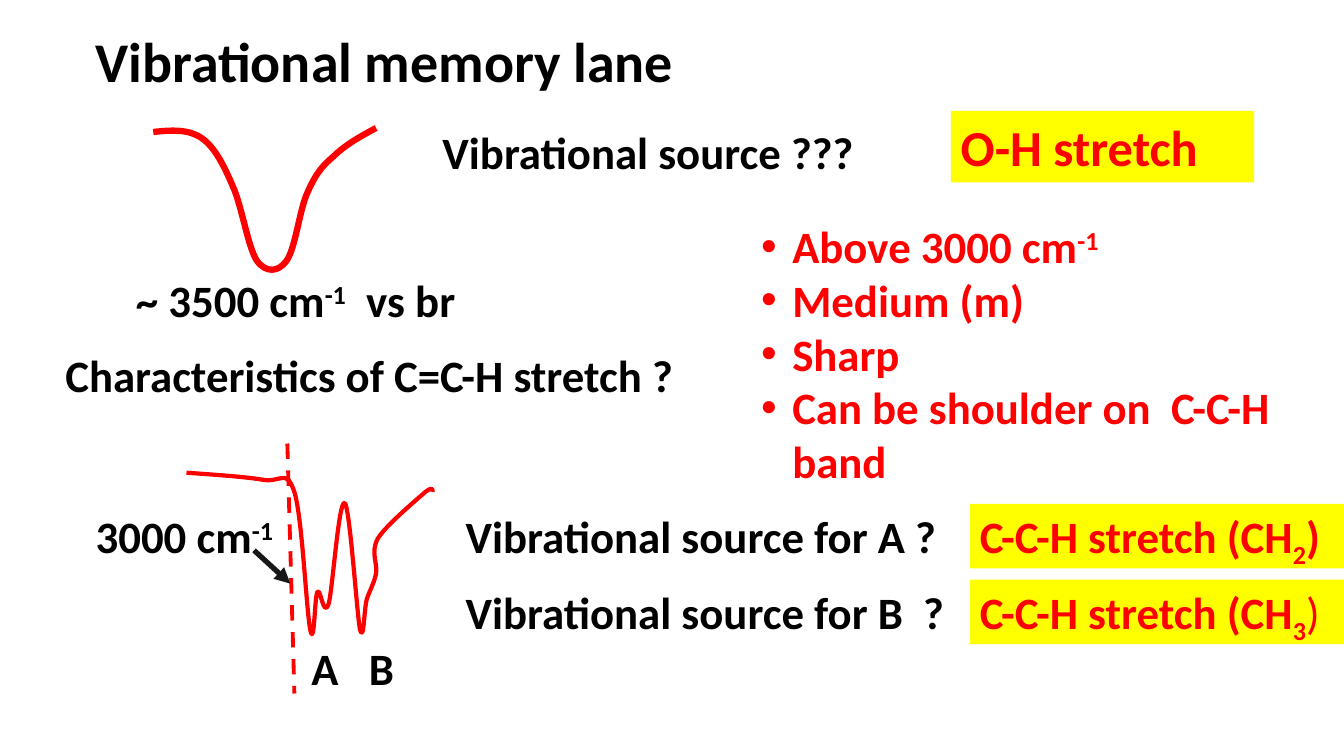
from dataclasses import dataclass
from lxml import etree
from pptx import Presentation, util as u
from pptx.dml.color import RGBColor
from pptx.enum import dml, shapes, text
from pptx.oxml.ns import qn


@dataclass(frozen=True)
class Theme:
    font: str = "Calibri"
    ink: str = "000000"
    red: str = "FF0000"
    mark: str = "FFFF00"
    arrow: str = "181717"
    title: int = 40
    large: int = 36
    body: int = 32


T = Theme()
CELL = u.Inches(0.1)  # grid of 133.3 columns by 75 rows
ROW = 6.4             # height of one line of body text
INDENT = 3.1
SUP, SUB = 30, -25

# Each curve: start point, then cubic pieces of two handles and an end
BROAD = [
    (15.2, 13.1),
    (17, 12.9), (18.7, 12.8), (20, 13.7),
    (21.3, 14.6), (22.2, 16.4), (23.1, 18.5),
    (24, 20.5), (24.6, 24.6), (25.5, 25.9),
    (26.4, 27.1), (27.6, 27), (28.4, 25.9),
    (29.3, 24.7), (29.7, 20.8), (30.5, 19.1),
    (31.3, 17.3), (31.9, 16.5), (33.1, 15.5),
    (34.2, 14.4), (35.8, 13.5), (37.3, 12.7)]
TWIN = [
    (18.5, 46.9),
    (21.4, 47.1), (24.3, 47.3), (26.1, 47.6),
    (27.9, 47.9), (28.4, 46.4), (29.2, 48.8),
    (30, 51.3), (30.4, 60.9), (30.8, 62.6),
    (31.2, 64.2), (31.2, 59.1), (31.5, 58.7),
    (31.8, 58.3), (32.1, 61.4), (32.6, 59.9),
    (33, 58.5), (33.6, 49.5), (34.2, 49.9),
    (34.7, 50.3), (35.4, 60.8), (35.7, 62.4),
    (36.1, 64), (36.1, 60.3), (36.4, 59.4),
    (36.7, 58.5), (37.1, 57.9), (37.3, 56.9),
    (37.5, 55.9), (36.7, 54.8), (37.5, 53.4),
    (38.3, 52.1), (41.3, 49.6), (42.2, 48.8),
    (43.1, 48.1), (42.9, 48.8), (42.9, 48.8)]


def grid(*cells):
    return [round(c * CELL) for c in cells]


def rgb(code):
    return RGBColor.from_string(code)


def add_runs(para, runs, size, color):
    """Runs are (words, baseline shift in percent, bold); the last two may be left out."""
    for words, *rest in runs:
        shift, bold = (rest + [0, True][len(rest):])
        run = para.add_run()
        run.text = words
        font = run.font
        font.name, font.size, font.bold = T.font, u.Pt(size), bold
        font.color.rgb = rgb(color)
        if shift:
            run._r.get_or_add_rPr().set("baseline", str(shift * 1000))


def write(shape, lines, size, color, grow=True):
    frame = shape.text_frame
    frame.word_wrap = True
    frame.vertical_anchor = text.MSO_ANCHOR.TOP
    fit = text.MSO_AUTO_SIZE
    frame.auto_size = fit.SHAPE_TO_FIT_TEXT if grow else fit.NONE
    for i, runs in enumerate(lines):
        para = frame.add_paragraph() if i else frame.paragraphs[0]
        para.alignment = text.PP_ALIGN.LEFT
        add_runs(para, runs, size, color)
    return frame


def label(slide, box, *runs, size=T.body):
    return write(slide.shapes.add_textbox(*grid(*box)), [runs], size, T.ink)


def answer(slide, box, *runs, size=T.body):
    rect = slide.shapes.add_shape(shapes.MSO_SHAPE.RECTANGLE, *grid(*box))
    rect.shadow.inherit = False
    rect.fill.solid()
    rect.fill.fore_color.rgb = rgb(T.mark)
    rect.line.fill.background()
    write(rect, [runs], size, T.red)


def bullets(slide, box, lines):
    shape = slide.shapes.add_textbox(*grid(*box))
    for para in write(shape, lines, T.body, T.red, grow=False).paragraphs:
        props = para._p.get_or_add_pPr()
        left, = grid(INDENT)
        props.set("marL", str(left))
        props.set("indent", str(-left))
        etree.SubElement(props, qn("a:buFont")).set("typeface", "Arial")
        etree.SubElement(props, qn("a:buChar")).set("char", "•")


def tab_stop(frame, pos):
    props = frame.paragraphs[0]._p.get_or_add_pPr()
    tabs = etree.SubElement(props, qn("a:tabLst"))
    stop = etree.SubElement(tabs, qn("a:tab"))
    stop.set("pos", str(grid(pos)[0]))
    stop.set("algn", "l")


def curve(slide, pts, width):
    """Draw an open outline, joining each three points into one cubic piece."""
    start, *rest = [grid(*p) for p in pts]
    pen = slide.shapes.build_freeform(*start)
    pen.add_line_segments(rest, close=False)
    shape = pen.convert_to_shape()
    steps = list(shape._element.iter(qn("a:lnTo")))
    for i in range(0, len(steps), 3):
        piece = etree.Element(qn("a:cubicBezTo"))
        steps[i].addprevious(piece)
        for step in steps[i:i + 3]:
            piece.append(step[0])
            step.getparent().remove(step)
    shape.shadow.inherit = False
    shape.fill.background()
    shape.line.color.rgb = rgb(T.red)
    shape.line.width = u.Pt(width)


def line(slide, start, end, color, width, dash=False, arrow=False):
    link = slide.shapes.add_connector(
        shapes.MSO_CONNECTOR.STRAIGHT, *grid(*start, *end))
    link.line.color.rgb = rgb(color)
    link.line.width = u.Pt(width)
    if dash:
        link.line.dash_style = dml.MSO_LINE.DASH
    if arrow:
        tail = etree.SubElement(link.line._get_or_add_ln(), qn("a:tailEnd"))
        tail.set("type", "triangle")
    etree.SubElement(link._element.spPr, qn("a:effectLst"))


def main():
    deck = Presentation()
    deck.slide_width, deck.slide_height = u.Inches(13.33), u.Inches(7.5)
    slide = deck.slides.add_slide(deck.slide_layouts[6])

    label(slide, (8.5, 2.1, 69.6, 7.7), ("Vibrational memory lane",), size=T.title)

    curve(slide, BROAD, 4.5)
    label(slide, (12.5, 26.6, 37.2, ROW), ("~ 3500 cm",), ("-1", SUP), ("  vs br",))
    label(slide, (42.9, 11.9, 45.8, ROW), ("Vibrational source ???",))
    answer(slide, (94.3, 11, 30.1, 7.1), ("O-H stretch",), size=T.large)

    label(slide, (5.5, 34, 66.2, ROW), ("Characteristics of C=C-H stretch ?",))
    bullets(slide, (74.5, 21.2, 54.6, 27.9), [
        [("Above 3000 cm",), ("-1", SUP)],
        [("Medium (m)",)],
        [("Sharp",)],
        [("Can be shoulder on  C-C-H band",)]])

    curve(slide, TWIN, 3)
    line(slide, (28.5, 44), (29.2, 68.8), T.red, 2.75, dash=True)
    label(slide, (8.5, 50, 24.5, ROW), ("3000 cm",), ("-1", SUP))
    line(slide, (25.2, 54.6), (28.8, 57.9), T.arrow, 3.75, arrow=True)
    tab_stop(label(slide, (29.9, 63.1, 12.3, ROW), ("A\tB",)), 5.7)

    asks = [("Vibrational source for A ?", 49.1, "2", True),
            ("Vibrational source for B  ?", 50.9, "3", False)]
    for i, (ask, wide, count, bold) in enumerate(asks):
        top = 50 + 7.5 * i
        label(slide, (45.2, top, wide, ROW), (ask,))
        answer(slide, (96.2, top, 37.2, ROW),
               ("C-C-H stretch (CH",), (count, SUB), (")", 0, bold))

    deck.save("out.pptx")


if __name__ == "__main__":
    main()
